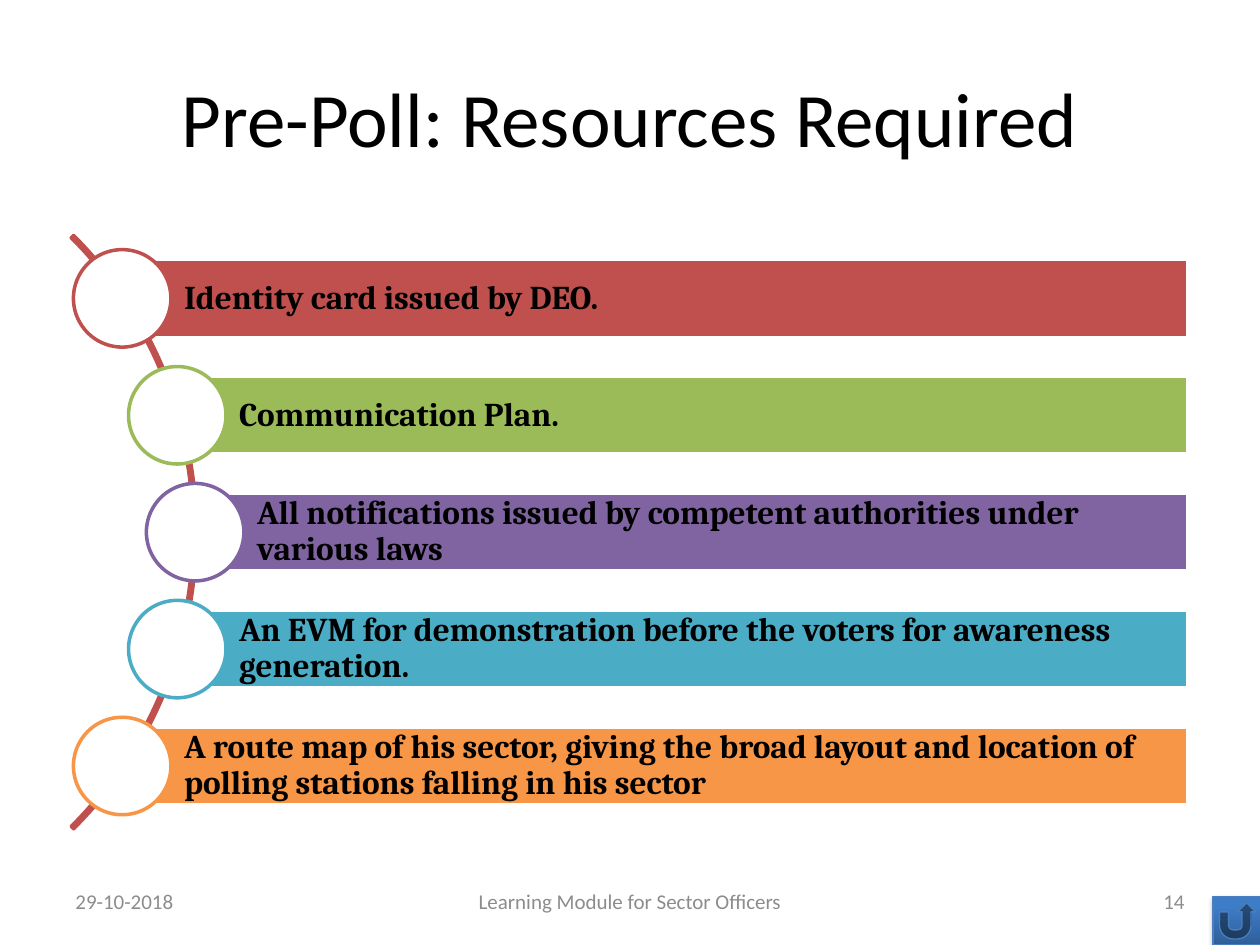
from lxml import etree
from pptx import Presentation
from pptx.dml.color import RGBColor as Rgb
from pptx.enum.shapes import MSO_SHAPE as Kind
from pptx.enum.text import MSO_ANCHOR as Anchor, PP_ALIGN as Align
from pptx.oxml.ns import qn
from pptx.util import Pt

HUES = {
    "red": "C0504D", "green": "9BBB59", "purple": "8064A2", "teal": "4BACC6",
    "orange": "F79646", "white": "FFFFFF", "black": "000000", "gray": "8C8C8C",
    "deep": "2F5F99", "blue": "3D7CC7", "edge": "4B7EBC",
}
TITLE = "Pre-Poll: Resources Required"
ITEMS = [
    ("Identity card issued by DEO.", "red", 69.8),
    ("Communication Plan.", "green", 101.3),
    ("All notifications issued by competent authorities under various laws",
     "purple", 111.5),
    ("An EVM for demonstration before the voters for awareness generation.",
     "teal", 101.3),
    ("A route map of his sector, giving the broad layout and location of "
     "polling stations falling in his sector", "orange", 69.8),
]
FOOT = [
    ("29-10-2018", 36, 168, Align.LEFT),
    ("Learning Module for Sector Officers", 246, 228, Align.CENTER),
    ("14", 516, 168, Align.RIGHT),
]
MID, STEP, RIGHT = 304.1, 66.8, 679
BAR, DOT, ARC = 44.6, 55.7, 479.5


def hue(name):
    return Rgb.from_string(HUES[name])


def shape(kind, box, fill, line, width=2):
    item = slide.shapes.add_shape(kind, *map(Pt, box))
    item.shadow.inherit = False
    if fill:
        item.fill.solid()
        item.fill.fore_color.rgb = hue(fill)
    else:
        item.fill.background()
    item.line.color.rgb = hue(line)
    item.line.width = Pt(width)
    return item


def write(item, text, size, face, color, align, bold=False):
    frame = item.text_frame
    frame.text = text
    frame.word_wrap = True
    frame.vertical_anchor = Anchor.MIDDLE
    para = frame.paragraphs[0]
    para.alignment = align
    font = para.runs[0].font
    font.size, font.name, font.bold = Pt(size), face, bold
    font.color.rgb = hue(color)
    return frame


def label(text, box, size, color, align):
    item = slide.shapes.add_textbox(*map(Pt, box))
    write(item, text, size, "Calibri", color, align)


deck = Presentation()
deck.slide_width, deck.slide_height = Pt(720), Pt(540)
slide = deck.slides.add_slide(deck.slide_layouts[6])

label(TITLE, (36, 21.6, 648, 90), 44, "black", Align.CENTER)

arc = shape(Kind.BLOCK_ARC, (-367.2, MID - ARC / 2, ARC, ARC), None, "red")
for i, value in enumerate((189, 27, 0.004)):
    arc.adjustments[i] = value

for i, (text, color, left) in enumerate(ITEMS):
    y = MID + (i - (len(ITEMS) - 1) / 2) * STEP
    bar = shape(Kind.RECTANGLE, (left, y - BAR / 2, RIGHT - left, BAR),
                color, "white")
    frame = write(bar, text, 19, "Cambria", "black", Align.LEFT, True)
    frame.margin_left = Pt(35.4)
    frame.margin_top = frame.margin_right = frame.margin_bottom = Pt(3.8)
    frame.paragraphs[0].line_spacing = 0.9
    shape(Kind.OVAL, (left - DOT / 2, y - DOT / 2, DOT, DOT), "white", color)

for text, left, width, align in FOOT:
    label(text, (left, 500.5, width, 28.75), 12, "gray", align)

button = shape(Kind.ACTION_BUTTON_RETURN, (693.2, 512.5, 28, 27.5),
               "blue", "edge", 0.75)
button.fill.gradient()
button.fill.gradient_angle = 90
for stop, place, color in zip(button.fill.gradient_stops, (0, 0.8),
                              ("deep", "blue")):
    stop.position = place
    stop.color.rgb = hue(color)
glow = etree.SubElement(
    button._element.spPr.find(qn("a:effectLst")), qn("a:outerShdw"),
    blurRad=str(Pt(3.1)), dist=str(Pt(1.8)), dir="5400000", rotWithShape="0")
tint = etree.SubElement(glow, qn("a:srgbClr"), val=HUES["black"])
etree.SubElement(tint, qn("a:alpha"), val="35000")

deck.save("out.pptx")
